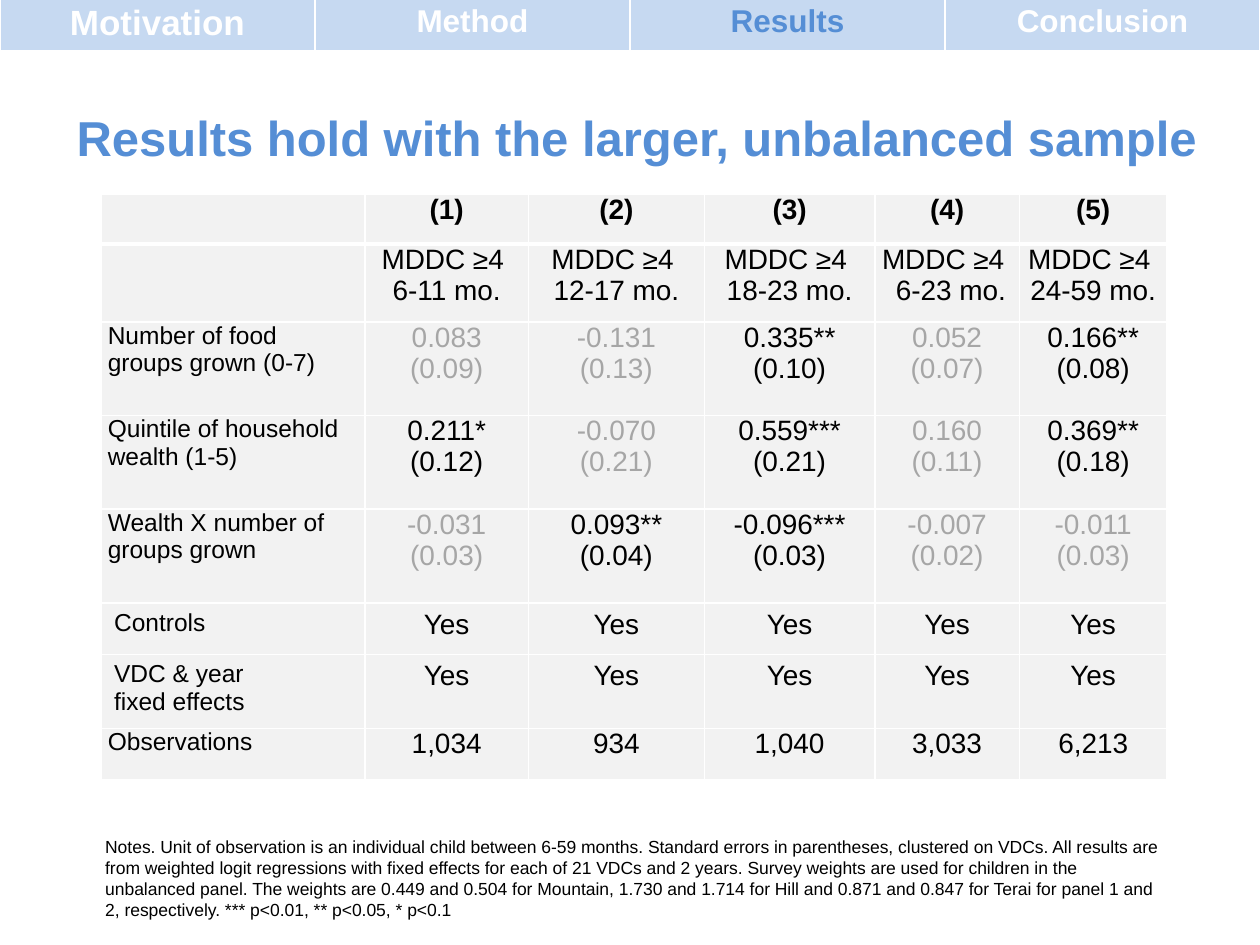
from lxml.etree import SubElement
from pptx import Presentation
from pptx.dml.color import RGBColor
from pptx.enum.text import MSO_ANCHOR, PP_ALIGN
from pptx.oxml.ns import qn
from pptx.util import Pt


def write_text(frame, text, size=16, color="000000", bold=False, align=PP_ALIGN.CENTER):
    frame.word_wrap = True
    for index, line in enumerate(text.split("\n")):
        paragraph = frame.paragraphs[0] if index == 0 else frame.add_paragraph()
        paragraph.alignment = align
        run = paragraph.add_run()
        run.text = line
        run.font.name = "Arial"
        run.font.size = Pt(size)
        run.font.bold = bold
        run.font.color.rgb = RGBColor.from_string(color)


def format_cell(cell, fill, top=1, bottom=1, side_margin=7.2, top_margin=3.6):
    cell.margin_left = cell.margin_right = Pt(side_margin)
    cell.margin_top = cell.margin_bottom = Pt(top_margin)
    properties = cell._tc.get_or_add_tcPr()
    for edge, width in (("L", 1), ("R", 1), ("T", top), ("B", bottom)):
        line = SubElement(properties, qn(f"a:ln{edge}"), w=str(Pt(width)))
        line_fill = SubElement(line, qn("a:solidFill"))
        SubElement(line_fill, qn("a:srgbClr"), val="FFFFFF")
    cell.fill.solid()
    cell.fill.fore_color.rgb = RGBColor.from_string(fill)


presentation = Presentation()
presentation.slide_width = Pt(720)
presentation.slide_height = Pt(540)
slide = presentation.slides.add_slide(presentation.slide_layouts[6])

title = slide.shapes.add_textbox(Pt(0), Pt(45.5), Pt(720), Pt(65.5)).text_frame
title.vertical_anchor = MSO_ANCHOR.MIDDLE
write_text(title, " Results hold with the larger, unbalanced sample", size=28, color="558ED5", bold=True)

column_widths = [150.5, 93.5, 100.5, 97.5, 82.5, 84.5]
row_heights = [28.5, 44.5, 53.5, 53.5, 53.5, 29.5, 42.5, 29]
rows = [
    ["", "(1)", "(2)", "(3)", "(4)", "(5)"],
    ["", "MDDC ≥4 \n6-11 mo.", "MDDC ≥4 \n12-17 mo.", "MDDC ≥4 \n18-23 mo.",
     "MDDC ≥4 \n 6-23 mo.", "MDDC ≥4 \n24-59 mo."],
    ["Number of food groups grown (0-7)", "0.083\n(0.09)", "-0.131\n(0.13)",
     "0.335**\n(0.10)", "0.052\n(0.07)", "0.166**\n(0.08)"],
    ["Quintile of household wealth (1-5)", "0.211*\n(0.12)", "-0.070\n(0.21)",
     "0.559***\n(0.21)", "0.160\n(0.11)", "0.369**\n(0.18)"],
    ["Wealth X number of groups grown", "-0.031\n(0.03)", "0.093**\n(0.04)",
     "-0.096***\n(0.03)", "-0.007\n(0.02)", "-0.011\n(0.03)"],
    ["Controls"] + ["Yes"] * 5,
    ["VDC & year\nfixed effects"] + ["Yes"] * 5,
    ["Observations", "1,034", "934", "1,040", "3,033", "6,213"],
]
results = slide.shapes.add_table(
    len(rows), len(column_widths), Pt(58), Pt(111), Pt(sum(column_widths)), Pt(sum(row_heights))
).table
results.first_row = results.horz_banding = False
for column, width in zip(results.columns, column_widths):
    column.width = Pt(width)
for row_index, (values, height) in enumerate(zip(rows, row_heights)):
    results.rows[row_index].height = Pt(height)
    roomy = "Yes" in values
    for column_index, value in enumerate(values):
        cell = results.cell(row_index, column_index)
        format_cell(
            cell, "F2F2F2",
            top=3 if row_index == 1 else 1,
            bottom=3 if row_index == 0 else 1,
            side_margin=7.2 if roomy else 3.6,
            top_margin=3.6 if roomy else 0,
        )
        if column_index == 0 and value:
            write_text(cell.text_frame, value, size=14, align=PP_ALIGN.LEFT)
        elif value:
            insignificant = row_index in (2, 3, 4) and "*" not in value
            write_text(cell.text_frame, value, bold=row_index == 0,
                       color="A6A6A6" if insignificant else "000000")

notes = slide.shapes.add_textbox(Pt(53), Pt(474), Pt(622), Pt(55)).text_frame
write_text(
    notes,
    "Notes. Unit of observation is an individual child between 6-59 months. Standard errors in "
    "parentheses, clustered on VDCs. All results are from weighted logit regressions with fixed "
    "effects for each of 21 VDCs and 2 years. Survey weights are used for children in the "
    "unbalanced panel. The weights are 0.449 and 0.504 for Mountain, 1.730 and 1.714 for Hill and "
    "0.871 and 0.847 for Terai for panel 1 and 2, respectively. *** p<0.01, ** p<0.05, * p<0.1",
    size=10, align=PP_ALIGN.LEFT,
)

sections = ["Motivation", "Method", "Results", "Conclusion"]
navigation = slide.shapes.add_table(1, len(sections), Pt(0), Pt(-1.5), Pt(720), Pt(30)).table
navigation.first_row = navigation.horz_banding = False
for index, section in enumerate(sections):
    cell = navigation.cell(0, index)
    format_cell(cell, "C6D9F1", bottom=3)
    write_text(cell.text_frame, section, size=20 if index == 0 else 18, bold=True,
               color="558ED5" if section == "Results" else "FFFFFF")

presentation.save("out.pptx")
